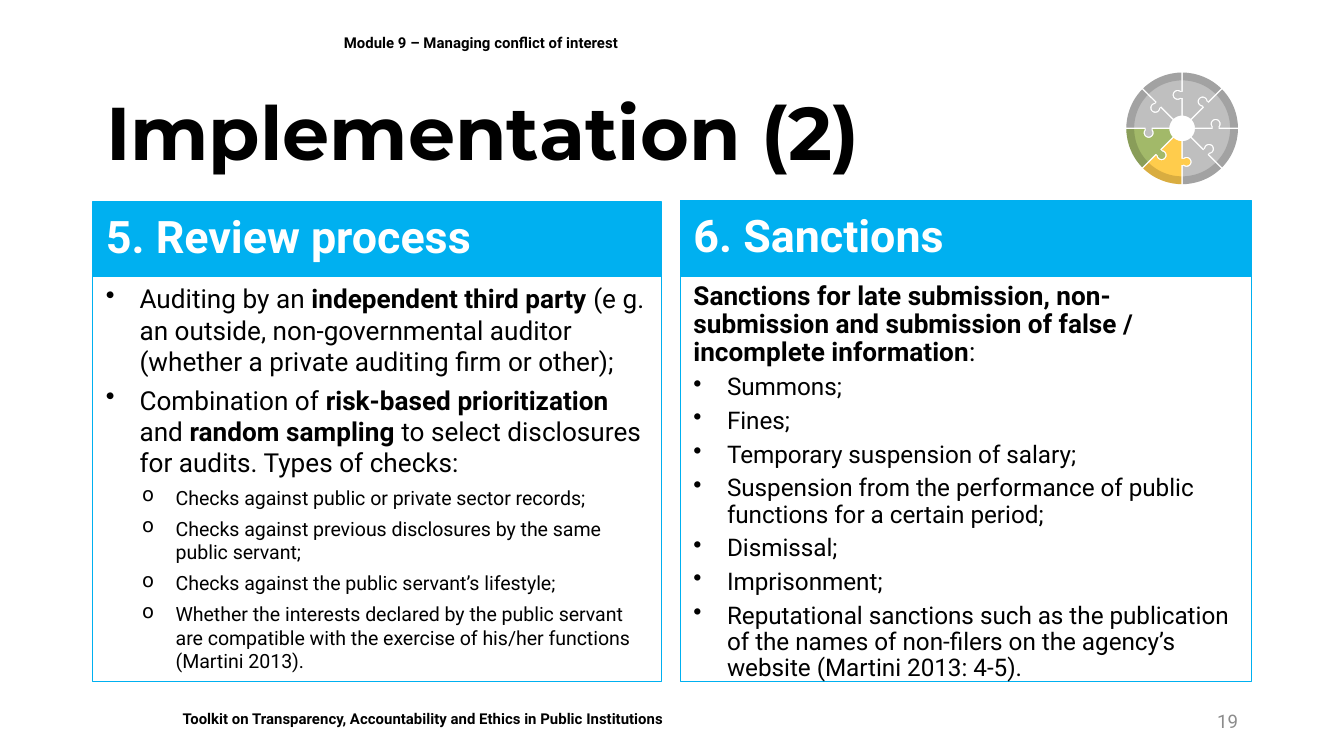
from math import asin, cos, pi, radians, sin

from lxml.etree import SubElement
from pptx import Presentation
from pptx.dml.color import RGBColor
from pptx.enum.text import MSO_ANCHOR as Anchor, MSO_AUTO_SIZE as AutoSize, PP_ALIGN as Align
from pptx.oxml.ns import qn
from pptx.util import Pt

BLACK = RGBColor(0x00, 0x00, 0x00)
WHITE = RGBColor(0xFF, 0xFF, 0xFF)
BLUE = RGBColor(0x00, 0xB0, 0xF0)
NUMBER_GREY = RGBColor(0x8C, 0x8C, 0x8C)
PIECE_GREY = RGBColor(0xBF, 0xBF, 0xBF)
GREEN = RGBColor(0xA2, 0xB9, 0x69)
YELLOW = RGBColor(0xFF, 0xCC, 0x4C)

BULLET = ("•", 18)
SUB_BULLET = ("o", 37.4)

# Each item: text with **bold** parts, size, bullet
REVIEW_ITEMS = [
    ("Auditing by an **independent third party** (e g. an outside, non-governmental "
     "auditor (whether a private auditing firm or other);", 14, BULLET),
    ("Combination of **risk-based prioritization **and **random sampling **"
     "to select disclosures for audits. Types of checks:", 14, BULLET),
] + [(check, 10.5, SUB_BULLET) for check in (
    "Checks against public or private sector records;",
    "Checks against previous disclosures by the same public servant;",
    "Checks against the public servant’s lifestyle;",
    "Whether the interests declared by the public servant are compatible with "
    "the exercise of his/her functions (Martini 2013).",
)]
SANCTION_ITEMS = [
    ("**Sanctions for late submission, non-submission and submission of false / "
     "incomplete information**:", 14, None),
] + [(sanction, 13, BULLET) for sanction in (
    "Summons;",
    "Fines;",
    "Temporary suspension of salary;",
    "Suspension from the performance of public functions for a certain period;",
    "Dismissal;",
    "Imprisonment;",
    "Reputational sanctions such as the publication of the names of non-filers "
    "on the agency’s website (Martini 2013: 4-5).",
)]


def set_font(paragraph, size, color=BLACK, bold=None, name="Roboto"):
    font = paragraph.font
    font.name, font.size, font.bold = name, Pt(size), bold
    font.color.rgb = color


def add_box(slide, box, anchor=Anchor.TOP, fill=None, line=None):
    shape = slide.shapes.add_textbox(*map(Pt, box))
    frame = shape.text_frame
    frame.word_wrap = True
    frame.vertical_anchor = anchor
    if fill is not None:
        shape.fill.solid()
        shape.fill.fore_color.rgb = fill
    if line is not None:
        shape.line.color.rgb = line
        shape.line.width = Pt(0.75)
    return frame


def add_label(slide, box, text, size, color=BLACK, bold=True, align=Align.LEFT, **style):
    paragraph = add_box(slide, box, **style).paragraphs[0]
    paragraph.text = text
    paragraph.alignment = align
    set_font(paragraph, size, color, bold)
    return paragraph


def set_bullet(paragraph, char, indent):
    properties = paragraph._p.get_or_add_pPr()
    properties.set("marL", str(Pt(indent)))
    properties.set("indent", str(-Pt(18)))
    SubElement(properties, qn("a:buChar")).set("char", char)


def add_title(slide, box, text):
    title = slide.shapes.title
    title.left, title.top, title.width, title.height = map(Pt, box)
    frame = title.text_frame
    frame.text = text
    frame.word_wrap = True
    frame.auto_size = AutoSize.NONE
    frame.vertical_anchor = Anchor.MIDDLE
    paragraph = frame.paragraphs[0]
    paragraph.alignment = Align.LEFT
    paragraph.line_spacing = 0.9
    set_font(paragraph, 40, bold=True, name="Montserrat")


def add_panel(slide, box, header_height, heading, items, line_spacing):
    left, top, width, height = box
    # Heading bar
    header = add_label(slide, (left, top, width, header_height), heading, 24, WHITE,
                       anchor=Anchor.MIDDLE, fill=BLUE, line=BLUE)
    header.line_spacing = 0.9
    # Framed list
    frame = add_box(slide, (left, top + header_height, width, height - header_height), line=BLUE)
    for index, (text, size, bullet) in enumerate(items):
        paragraph = frame.add_paragraph() if index else frame.paragraphs[0]
        if bullet:
            set_bullet(paragraph, *bullet)
        paragraph.line_spacing = line_spacing
        paragraph.space_before = Pt(4 if index else 0)
        set_font(paragraph, size)
        for part, words in enumerate(text.split("**")):
            if words:
                run = paragraph.add_run()
                run.text = words
                run.font.bold = part % 2 == 1


def add_outline(slide, points, color, opacity=None):
    corners = [(Pt(x), Pt(y)) for x, y in points]
    builder = slide.shapes.build_freeform(*corners[0], scale=1.0)
    builder.add_line_segments(corners[1:], close=True)
    shape = builder.convert_to_shape()
    shape.shadow.inherit = False
    shape.fill.solid()
    shape.fill.fore_color.rgb = color
    shape.line.fill.background()
    if opacity is not None:
        tint = shape._element.spPr.find(qn("a:solidFill"))[0]
        SubElement(tint, qn("a:alpha")).set("val", str(opacity * 1000))


def add_puzzle_wheel(slide, box, colors):
    left, top, size, _ = box
    center_x, center_y, outer = left + size / 2, top + size / 2, size / 2
    hub, rim = outer * 0.23, outer * 0.86
    knob_at, knob_shift = outer * 0.6, outer * 0.08
    half_gap = 0.4
    step = 2 * pi / len(colors)

    def place(angle, along, across):
        """Point along a clockwise spoke angle, shifted clockwise across it."""
        return (center_x + along * sin(angle) + across * cos(angle),
                center_y - along * cos(angle) + across * sin(angle))

    def arc(start, end, radius):
        trim = asin(half_gap / radius)
        first, last = start + trim, end - trim
        return [place(first + (last - first) * i / 12, radius, 0) for i in range(13)]

    def knob(angle, radius):
        turns = [radians(a) for a in range(230, -231, -20) if abs(a) <= 130]
        return [place(angle, knob_at - radius * sin(t), -knob_shift - radius * cos(t))
                for t in turns][::-1]

    # Each piece has a tab on its first edge and a socket on its last
    for index, color in enumerate(colors):
        start, end = index * step, (index + 1) * step
        tab, socket = knob(start, 2), knob(end, 2.75)
        tab_root = [place(start, knob_at + side, half_gap) for side in (-1.6, 1.6)]
        socket_root = [place(end, knob_at + side, -half_gap) for side in (2.2, -2.2)]
        add_outline(slide, [
            *([tab_root[0]] + tab[::-1] + [tab_root[1]]),
            *arc(start, end, outer),
            *([socket_root[0]] + socket + [socket_root[1]]),
            *arc(start, end, hub)[::-1],
        ], color)
    # Darker rim
    for index in range(len(colors)):
        start, end = index * step, (index + 1) * step
        add_outline(slide, arc(start, end, outer) + arc(start, end, rim)[::-1], BLACK, opacity=15)


def main():
    deck = Presentation()
    deck.slide_width, deck.slide_height = Pt(720), Pt(405)
    slide = deck.slides.add_slide(deck.slide_layouts[5])

    # Footer, page number and module line
    add_label(slide, (90.7, 376.6, 516, 17.3),
              "Toolkit on Transparency, Accountability and Ethics in Public Institutions",
              8, fill=WHITE)
    add_label(slide, (508, 375.4, 162.3, 21.6), "19", 10, NUMBER_GREY, bold=False,
              align=Align.RIGHT, anchor=Anchor.MIDDLE)
    add_label(slide, (177.1, 7.2, 493.2, 31.7), "Module 9 – Managing conflict of interest",
              8, anchor=Anchor.MIDDLE)

    add_title(slide, (49.7, 46.1, 620.6, 54), "Implementation (2)")
    add_panel(slide, (49.7, 108.3, 304.6, 256.9), 39.5, "5. Review process", REVIEW_ITEMS, 1.0)
    add_panel(slide, (364.4, 107.4, 306, 257.8), 40.4, "6. Sanctions", SANCTION_ITEMS, 0.9)

    # Steps 5 and 6 stand out on the wheel
    add_puzzle_wheel(slide, (603.4, 38.9, 59.8, 59.8),
                     [PIECE_GREY] * 4 + [YELLOW, GREEN] + [PIECE_GREY] * 2)

    deck.save("out.pptx")


if __name__ == "__main__":
    main()
